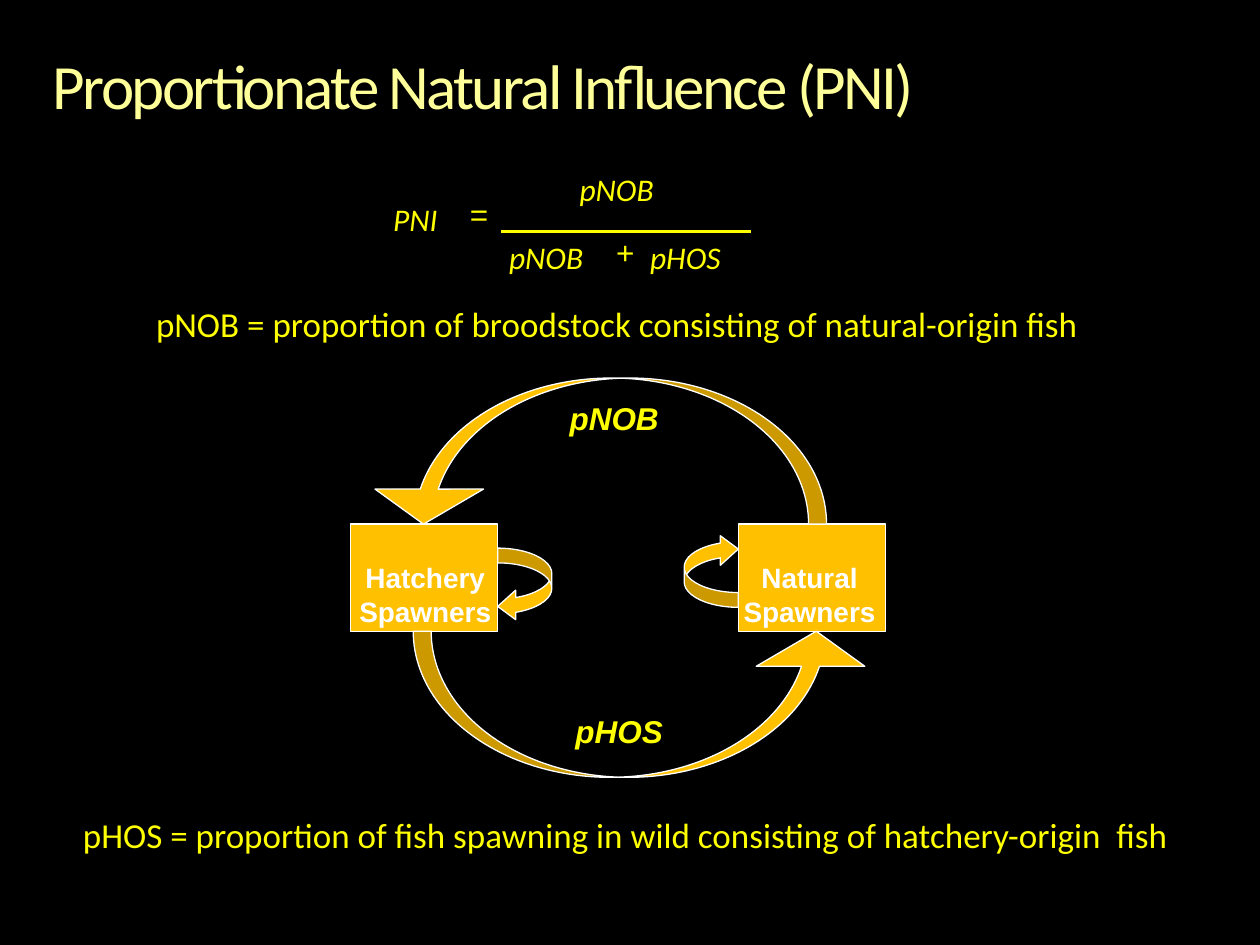
from pptx import Presentation
from pptx.dml.color import RGBColor
from pptx.enum.shapes import MSO_CONNECTOR, MSO_SHAPE
from pptx.enum.text import MSO_ANCHOR, PP_ALIGN
from pptx.oxml.ns import qn
from pptx.util import Inches, Pt
from lxml import etree

RECT = MSO_SHAPE.RECTANGLE
LOOP_ARROW = MSO_SHAPE.CURVED_LEFT_ARROW
FLOW_ARROW = MSO_SHAPE.CURVED_UP_ARROW
LEFT, CENTER = PP_ALIGN.LEFT, PP_ALIGN.CENTER
TOP, MIDDLE = MSO_ANCHOR.TOP, MSO_ANCHOR.MIDDLE
YELLOW, GOLD, WHITE = "FFFF00", "FFC000", "FFFFFF"
rgb = RGBColor.from_string

prs = Presentation()
prs.slide_width, prs.slide_height = Inches(10), Inches(7.5)
CELL = prs.slide_width // 100  # the slide is a grid of 100 columns by 75 rows
s = prs.slides.add_slide(prs.slide_layouts[6])
s.background.fill.solid()
s.background.fill.fore_color.rgb = rgb("000000")


def grid(*cells):
    """Turn columns and rows into slide lengths."""
    return [round(c * CELL) for c in cells]


def add_text(text, box, size, font="Calibri", color=YELLOW, bold=False, italic=False,
             align=LEFT, anchor=TOP, wrap=True, inset=True):
    tf = s.shapes.add_textbox(*grid(*box)).text_frame
    tf.word_wrap = wrap
    tf.vertical_anchor = anchor
    if not inset:
        tf.margin_left = tf.margin_right = tf.margin_top = tf.margin_bottom = 0
    tf.text = text
    for p in tf.paragraphs:
        p.alignment = align
        for r in p.runs:
            r.font.size, r.font.name = Pt(size), font
            r.font.bold, r.font.italic = bold, italic
            r.font.color.rgb = rgb(color)
    return tf


# Title
tf = add_text("Proportionate Natural Influence (PNI)", (4.2, 3.5, 90, 12.5), 36,
              color="FFFF99", inset=False)
tf.margin_top = grid(0.85)[0]
p = tf.paragraphs[0]
p.line_spacing = 0.9
p.runs[0]._r.get_or_add_rPr().set("spc", "-150")

# Spawner cycle: arrows and boxes
LOOP_ADJ, FLOW_ADJ = (0.273, 0.545, 0.333), (0.123, 0.743, 0.24)
for kind, box, rotation, adjustments in (
    (LOOP_ARROW, (39.5, 43.5, 4.3, 5.8), 0, LOOP_ADJ),
    (RECT, (27.8, 41.6, 11.7, 8.5), 0, ()),
    (LOOP_ARROW, (54.3, 42.4, 4.3, 5.8), 180, LOOP_ADJ),
    (RECT, (58.6, 41.6, 11.7, 8.5), 0, ()),
    (FLOW_ARROW, (32.8, 50.1, 36.3, 11.6), 0, FLOW_ADJ),
    (FLOW_ARROW, (29.3, 30, 36.3, 11.6), 180, FLOW_ADJ),
):
    sp = s.shapes.add_shape(kind, *grid(*box))
    sp.rotation = rotation
    for i, value in enumerate(adjustments):
        sp.adjustments[i] = value
    sp.shadow.inherit = False
    sp.fill.solid()
    sp.fill.fore_color.rgb = rgb(GOLD)
    sp.line.color.rgb = rgb(WHITE)
    sp.line.width = Pt(0.75)

for name, x in (("Hatchery", 27.5), ("Natural", 58)):
    add_text(f"{name}\nSpawners", (x, 44, 12.5, 6.4), 16, "Arial", WHITE,
             bold=True, align=CENTER, wrap=False)

for label, x, y in (("pHOS", 44, 56), ("pNOB", 43.6, 31.2)):
    add_text(label, (x, y, 10.3, 4), 18, "Arial", bold=True, italic=True,
             align=CENTER, anchor=MIDDLE)

# Definitions
add_text("pHOS = proportion of fish spawning in wild consisting of hatchery-origin  fish",
         (5.6, 64.1, 90.7, 4.4), 20)
add_text("pNOB = proportion of broodstock consisting of natural-origin fish",
         (11.4, 23.5, 75.6, 4.4), 20)

# Formula
bar = s.shapes.add_connector(MSO_CONNECTOR.STRAIGHT, *grid(39.8, 18.4, 59.6, 18.4))
bar.line.color.rgb = rgb(YELLOW)
bar.line.width = Pt(1.63)
etree.SubElement(bar._element.spPr, qn("a:effectLst"))

for term, x, y, w in (
    ("pHOS", 51.6, 18.9, 6.6),
    ("pNOB", 40.4, 18.9, 6.7),
    ("pNOB", 46, 13.5, 6.7),
    ("PNI", 31.2, 15.9, 4.4),
    ("+", 48.9, 18.5, 1.4),
    ("=", 37.3, 15.5, 1.4),
):
    is_name = term.isalpha()
    add_text(term, (x, y, w, 3), 18, "Calibri" if is_name else "Arial",
             italic=is_name, wrap=False, inset=False)

prs.save("out.pptx")
